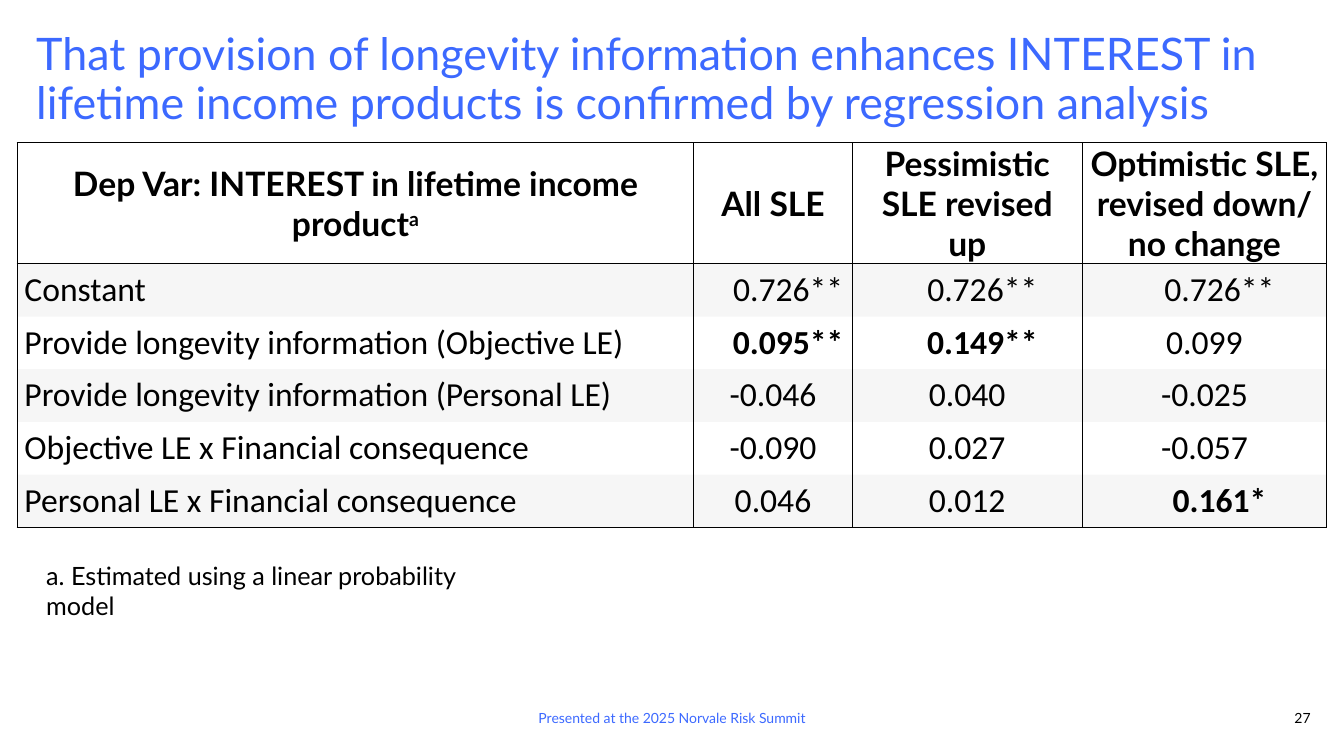
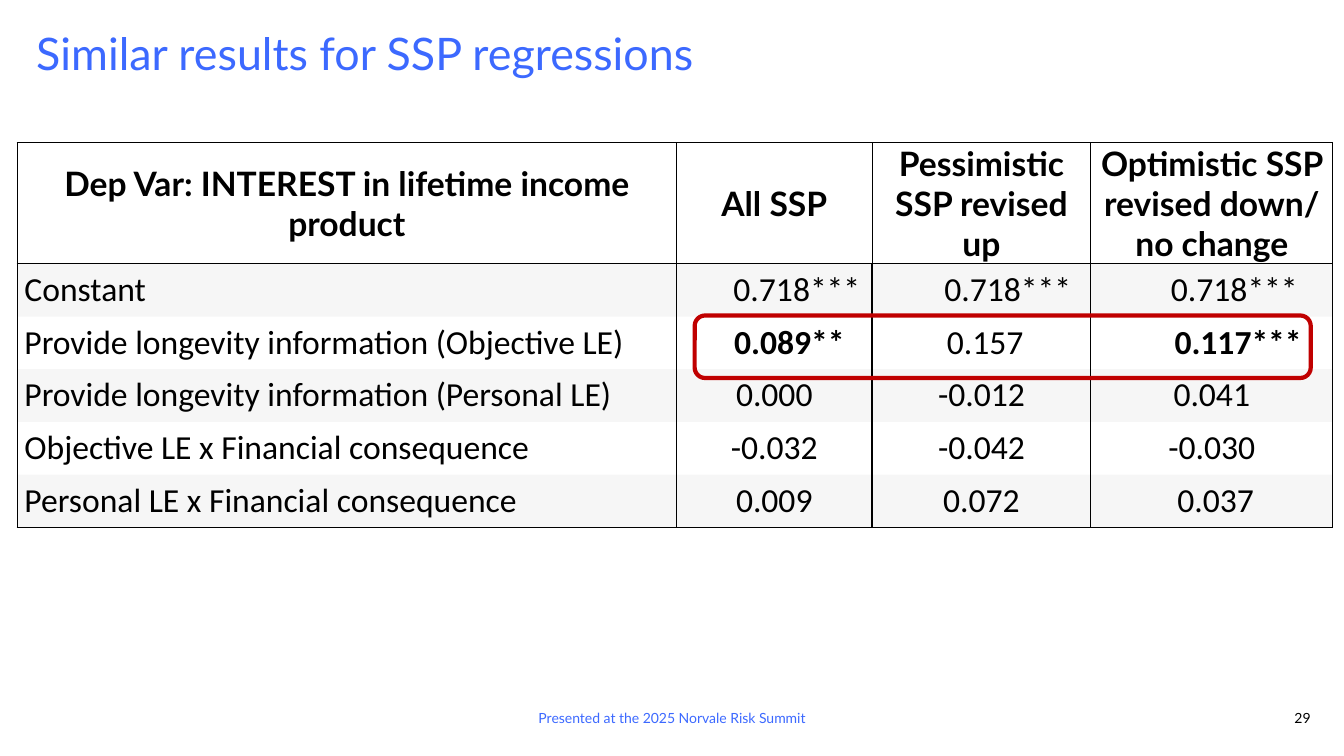
from dataclasses import dataclass
from typing import NamedTuple

from lxml import etree
from pptx import Presentation
from pptx.dml.color import RGBColor
from pptx.enum.shapes import MSO_SHAPE
from pptx.enum.text import MSO_ANCHOR, PP_ALIGN
from pptx.oxml.ns import qn
from pptx.util import Inches, Pt

LEFT, CENTER, RIGHT = PP_ALIGN.LEFT, PP_ALIGN.CENTER, PP_ALIGN.RIGHT
TOP, MIDDLE, BOTTOM = MSO_ANCHOR.TOP, MSO_ANCHOR.MIDDLE, MSO_ANCHOR.BOTTOM
ROUNDED = MSO_SHAPE.ROUNDED_RECTANGLE

COLORS = {"title": "3C69FF", "text": "000000", "band": "D6D6D6", "mark": "C00000"}
BAND_ALPHA = 20
HEAD_FONT, BODY_FONT = "Lato", "Calibri"
TITLE_SIZE, TABLE_SIZE, NOTE_SIZE, FOOT_SIZE = 32, 24, 18, 10
SLIDE_W, SLIDE_H = Inches(13.333), Inches(7.5)
FOOTER = "Presented at the 2025 Norvale Risk Summit"


class Box(NamedTuple):
    """A frame in percent of the slide's width and height."""
    left: float
    top: float
    width: float
    height: float


class Run(NamedTuple):
    """A stretch of text with one look."""
    text: str
    size: float
    color: str = "text"
    font: str = HEAD_FONT
    bold: bool = False
    raised: bool = False


class Value(NamedTuple):
    """A table figure, with its indent in steps."""
    text: str
    lead: int = 0
    bold: bool = False


@dataclass
class Regression:
    """One slide with a regression table."""
    title: str
    page: str
    widths: list[float]
    heads: list[str]
    rows: list[list[Value]]
    head_mark: str = ""
    note: str = ""
    highlight: Box | None = None


TITLE_BOX = Box(2.7, 4.27, 94.82, 18.67)
FOOTER_BOX = Box(33.12, 93.4, 33.76, 2.67)
PAGE_BOX = Box(94.07, 93.4, 3.45, 2.67)
NOTE_BOX = Box(2.7, 73.47, 35.71, 9.33)
TABLE_LEFT, TABLE_TOP, HEAD_H, ROW_H = 1.28, 18.9, 16, 6.97
CELL_INSET, LEAD_STEP = 0.54, 0.56
DEPENDENT = "Dep Var: INTEREST in lifetime income product"
LABELS = [
    "Constant",
    "Provide longevity information (Objective LE)",
    "Provide longevity information (Personal LE)",
    "Objective LE x Financial consequence",
    "Personal LE x Financial consequence",
]

SLIDES = [
    Regression(
        title="That provision of longevity information enhances INTEREST in "
              "lifetime income products is confirmed by regression analysis",
        page="27",
        widths=[50.34, 11.8, 17.1, 18.2],
        heads=["All SLE", "Pessimistic SLE revised up",
               "Optimistic SLE, revised down/ no change"],
        rows=[
            [Value("0.726**", 4), Value("0.726**", 4), Value("0.726**", 4)],
            [Value("0.095**", 4, True), Value("0.149**", 4, True), Value("0.099")],
            [Value("-0.046"), Value("0.040"), Value("-0.025")],
            [Value("-0.090"), Value("0.027"), Value("-0.057")],
            [Value("0.046"), Value("0.012"), Value("0.161*", 4, True)],
        ],
        head_mark="a",
        note="a. Estimated using a linear probability model",
    ),
    Regression(
        title="Similar results for SSP regressions",
        page="29",
        widths=[49.06, 14.55, 16.28, 18],
        heads=["All SSP", "Pessimistic SSP revised up",
               "Optimistic SSP revised down/ no change"],
        rows=[
            [Value("0.718***", 6), Value("0.718***", 7), Value("0.718***", 6)],
            [Value("0.089**", 4, True), Value("0.157", 1), Value("0.117***", 7, True)],
            [Value("0.000"), Value("-0.012"), Value("0.041")],
            [Value("-0.032"), Value("-0.042"), Value("-0.030")],
            [Value("0.009"), Value("0.072"), Value("0.037", 1)],
        ],
        highlight=Box(51.69, 41.73, 45.84, 8.27),
    ),
]


def across(share: float) -> int:
    """Turn a percentage of the slide's width into a length."""
    return round(SLIDE_W * share / 100)


def down(share: float) -> int:
    """Turn a percentage of the slide's height into a length."""
    return round(SLIDE_H * share / 100)


def frame(box: Box) -> tuple[int, int, int, int]:
    """Give the lengths of a box."""
    return across(box.left), down(box.top), across(box.width), down(box.height)


def add_runs(p, runs: list[Run], align) -> None:
    """Write runs into a paragraph."""
    p.alignment = align
    for run in runs:
        r = p.add_run()
        r.text = run.text
        r.font.name, r.font.size, r.font.bold = run.font, Pt(run.size), run.bold
        r.font.color.rgb = RGBColor.from_string(COLORS[run.color])
        if run.raised:
            r.font._element.set("baseline", "30000")


def add_text(s, box: Box, run: Run, align=LEFT, anchor=TOP, inset: bool = False,
             spacing: float = 1.0) -> None:
    """Place a wrapped text box."""
    tf = s.shapes.add_textbox(*frame(box)).text_frame
    tf.word_wrap = True
    tf.vertical_anchor = anchor
    if not inset:
        tf.margin_left = tf.margin_right = tf.margin_top = tf.margin_bottom = 0
    tf.paragraphs[0].line_spacing = spacing
    add_runs(tf.paragraphs[0], [run], align)


def set_borders(cell, visible: dict[str, float]) -> None:
    """Draw the named sides of a cell and clear the others."""
    tc_pr = cell._tc.get_or_add_tcPr()
    for side in "LRTB":
        ln = etree.SubElement(tc_pr, qn(f"a:ln{side}"))
        if side in visible:
            ln.set("w", str(Pt(visible[side])))
            fill = etree.SubElement(ln, qn("a:solidFill"))
            etree.SubElement(fill, qn("a:srgbClr"), val=COLORS["text"])
        else:
            ln.set("w", "0")
            etree.SubElement(ln, qn("a:noFill"))


def set_fill(cell, banded: bool) -> None:
    """Give a cell the translucent band or no fill."""
    if not banded:
        cell.fill.background()
        return
    cell.fill.solid()
    cell.fill.fore_color.rgb = RGBColor.from_string(COLORS["band"])
    color = cell._tc.tcPr.find(qn("a:solidFill")).find(qn("a:srgbClr"))
    etree.SubElement(color, qn("a:alpha"), val=str(BAND_ALPHA * 1000))


def fill_cell(cell, runs: list[Run], align, lead: int = 0) -> None:
    """Write a table cell's text."""
    cell.vertical_anchor = MIDDLE
    cell.margin_left = cell.margin_right = across(CELL_INSET)
    cell.margin_top = cell.margin_bottom = 0
    p = cell.text_frame.paragraphs[0]
    add_runs(p, runs, align)
    if lead:
        p._p.get_or_add_pPr().set("marL", str(across(lead * LEAD_STEP)))


def add_regression_table(s, spec: Regression) -> None:
    """Place the table of regression results."""
    n_rows = len(LABELS) + 1
    box = Box(TABLE_LEFT, TABLE_TOP, sum(spec.widths), HEAD_H + ROW_H * len(LABELS))
    table = s.shapes.add_table(n_rows, len(spec.widths), *frame(box)).table
    table.first_row = table.horz_banding = False
    for column, width in zip(table.columns, spec.widths):
        column.width = across(width)
    for i, row in enumerate(table.rows):
        row.height = down(ROW_H if i else HEAD_H)
        sides = {"L": 1, "R": 1} if i else {"L": 0.75, "R": 0.75, "T": 0.75, "B": 1}
        if i == 1:
            sides["T"] = 1
        if i == n_rows - 1:
            sides["B"] = 1
        for cell in row.cells:
            set_borders(cell, sides)
            set_fill(cell, i % 2 == 1)

    for j, head in enumerate([DEPENDENT, *spec.heads]):
        runs = [Run(head, TABLE_SIZE, bold=True)]
        if j == 0 and spec.head_mark:
            runs.append(Run(spec.head_mark, TABLE_SIZE, bold=True, raised=True))
        fill_cell(table.cell(0, j), runs, CENTER)
    for i, (label, values) in enumerate(zip(LABELS, spec.rows), 1):
        for j, value in enumerate([Value(label), *values]):
            run = Run(value.text, TABLE_SIZE, font=BODY_FONT, bold=value.bold)
            fill_cell(table.cell(i, j), [run], CENTER if j else LEFT, value.lead)


def add_highlight(s, box: Box) -> None:
    """Outline part of the table with a rounded frame."""
    sp = s.shapes.add_shape(ROUNDED, *frame(box))
    sp.shadow.inherit = False
    sp.fill.background()
    sp.line.color.rgb = RGBColor.from_string(COLORS["mark"])
    sp.line.width = Pt(3)


def add_regression_slide(prs, spec: Regression) -> None:
    """Build one slide with its title, footer and table."""
    s = prs.slides.add_slide(prs.slide_layouts[6])
    add_text(s, TITLE_BOX, Run(spec.title, TITLE_SIZE, "title"), spacing=0.9)
    add_text(s, PAGE_BOX, Run(spec.page, FOOT_SIZE), RIGHT, BOTTOM)
    add_text(s, FOOTER_BOX, Run(FOOTER, FOOT_SIZE, "title"), CENTER, BOTTOM)
    add_regression_table(s, spec)
    if spec.note:
        add_text(s, NOTE_BOX, Run(spec.note, NOTE_SIZE), inset=True)
    if spec.highlight:
        add_highlight(s, spec.highlight)


def main() -> None:
    """Build and save the presentation."""
    prs = Presentation()
    prs.slide_width, prs.slide_height = SLIDE_W, SLIDE_H
    for spec in SLIDES:
        add_regression_slide(prs, spec)
    prs.save("out.pptx")


if __name__ == "__main__":
    main()
